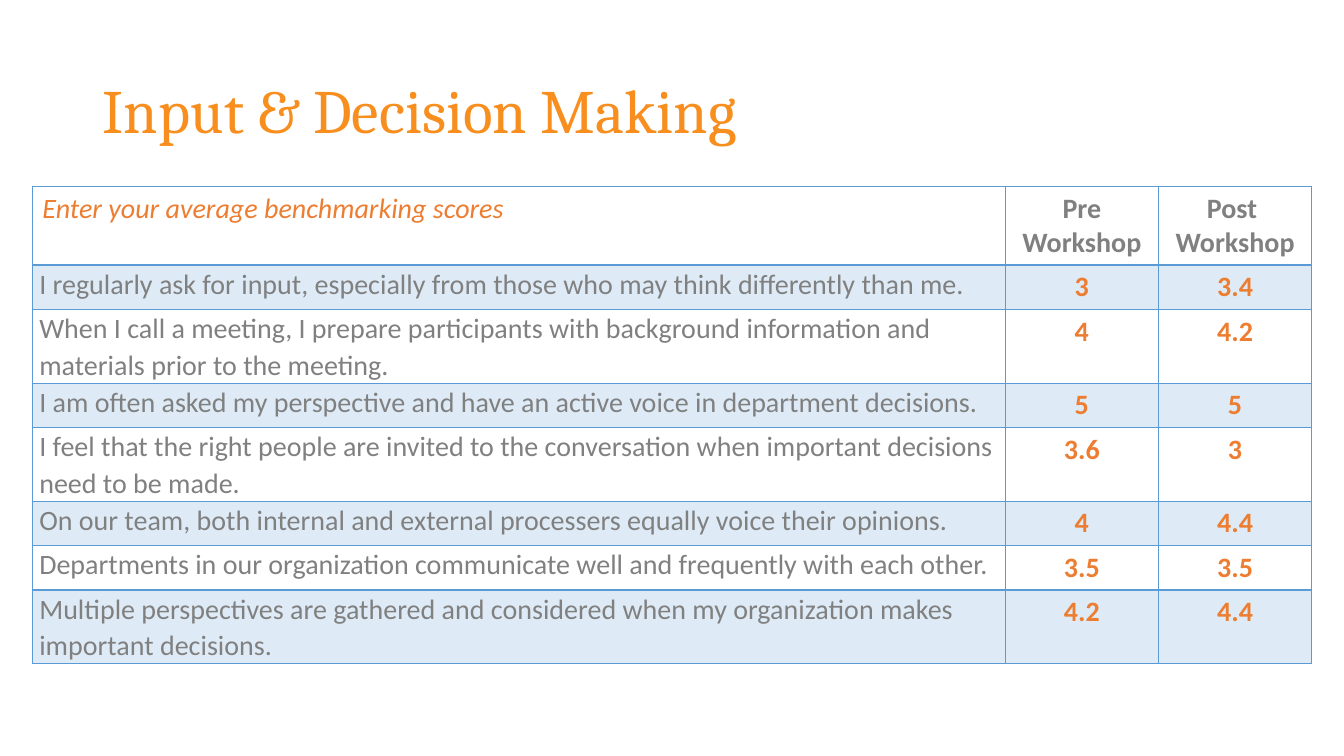
import pptx
import pptx.dml.color
import pptx.enum.text
import pptx.oxml
import pptx.oxml.ns
import pptx.util
from pptx.util import Inches, Pt

TITLE = "Input & Decision Making"
HEADER = ("Enter your average benchmarking scores", "Pre Workshop", "Post \nWorkshop")
# statement, pre-workshop score, post-workshop score, lines of text
SCORES = [
    ("I regularly ask for input, especially from those who may think differently than me.", "3", "3.4", 1),
    ("When I call a meeting, I prepare participants with background information and "
     "materials prior to the meeting.", "4", "4.2", 2),
    ("I am often asked my perspective and have an active voice in department decisions.", "5", "5", 1),
    ("I feel that the right people are invited to the conversation when important decisions "
     "need to be made.", "3.6", "3", 2),
    ("On our team, both internal and external processers equally voice their opinions.", "4", "4.4", 1),
    ("Departments in our organization communicate well and frequently with each other.", "3.5", "3.5", 1),
    ("Multiple perspectives are gathered and considered when my organization makes "
     "important decisions.", "4.2", "4.4", 2),
]
COLUMN_WIDTHS = (9.65, 1.52, 1.52)
HEADER_HEIGHT = 0.78
ROW_HEIGHTS = {1: 0.44, 2: 0.73}
ORANGE, GRAY, BLUE, TITLE_ORANGE = "ED7D31", "808080", "5B9BD5", "F78E1E"
BAND_ALPHA = 20


def rgb(value):
    return pptx.dml.color.RGBColor.from_string(value)


def format_text(text_frame, size, font_name, color, bold=False, italic=False, centered=False, spacing=None):
    align = pptx.enum.text.PP_ALIGN
    for paragraph in text_frame.paragraphs:
        paragraph.alignment = align.CENTER if centered else align.LEFT
        if spacing:
            paragraph.line_spacing = spacing
        for run in paragraph.runs:
            run.font.size = Pt(size)
            run.font.name = font_name
            run.font.bold = bold
            run.font.italic = italic
            run.font.color.rgb = rgb(color)


def set_borders(cell, bottom_width, top_width):
    properties = cell._tc.get_or_add_tcPr()
    widths = {"lnL": 1, "lnR": 1, "lnT": top_width, "lnB": bottom_width}
    for position, (side, width) in enumerate(widths.items()):
        properties.insert(position, pptx.oxml.parse_xml(
            f'<a:{side} {pptx.oxml.ns.nsdecls("a")} w="{Pt(width)}">'
            f'<a:solidFill><a:srgbClr val="{BLUE}"/></a:solidFill></a:{side}>'))


def set_fill(cell, banded):
    if not banded:
        cell.fill.background()
        return
    cell.fill.solid()
    cell.fill.fore_color.rgb = rgb(BLUE)
    color = cell._tc.tcPr.find(pptx.oxml.ns.qn("a:solidFill"))[0]
    color.append(pptx.oxml.parse_xml(
        f'<a:alpha {pptx.oxml.ns.nsdecls("a")} val="{BAND_ALPHA * 1000}"/>'))


def add_title(slide):
    title = slide.shapes.title
    title.left, title.top, title.width, title.height = map(Inches, (0.92, 0.4, 11.5, 1.45))
    title.text_frame.text = TITLE
    title.text_frame.word_wrap = True
    title.text_frame.auto_size = pptx.enum.text.MSO_AUTO_SIZE.NONE
    title.text_frame.vertical_anchor = pptx.enum.text.MSO_ANCHOR.MIDDLE
    format_text(title.text_frame, 44, "Cambria", TITLE_ORANGE, spacing=0.9)


def add_score_table(slide):
    heights = [HEADER_HEIGHT] + [ROW_HEIGHTS[lines] for *_, lines in SCORES]
    rows = [HEADER] + [row[:3] for row in SCORES]
    table = slide.shapes.add_table(
        len(rows), len(COLUMN_WIDTHS), Inches(0.32), Inches(1.85),
        Inches(sum(COLUMN_WIDTHS)), Inches(sum(heights))).table
    table.first_row = table.horz_banding = False
    for column, width in zip(table.columns, COLUMN_WIDTHS):
        column.width = Inches(width)
    for row_index, (texts, height) in enumerate(zip(rows, heights)):
        table.rows[row_index].height = Inches(height)
        is_header = row_index == 0
        for column_index, text in enumerate(texts):
            cell = table.cell(row_index, column_index)
            is_score = column_index > 0
            cell.text_frame.text = text
            is_statement = not (is_header or is_score)
            if is_statement:
                cell.margin_left = cell.margin_right = Inches(0.07)
                cell.margin_top = cell.margin_bottom = 0
            format_text(cell.text_frame, 20, "Calibri",
                        ORANGE if is_header != is_score else GRAY,
                        bold=is_score, italic=is_header and not is_score,
                        centered=is_score, spacing=1.07 if is_statement else None)
            set_fill(cell, row_index % 2 == 1)
            set_borders(cell, bottom_width=2 if is_header else 1,
                        top_width=2 if row_index == 1 else 1)


def main():
    presentation = pptx.Presentation()
    presentation.slide_width, presentation.slide_height = Inches(13.33), Inches(7.5)
    slide = presentation.slides.add_slide(presentation.slide_layouts.get_by_name("Title Only"))
    add_title(slide)
    add_score_table(slide)
    presentation.save("out.pptx")


if __name__ == "__main__":
    main()
